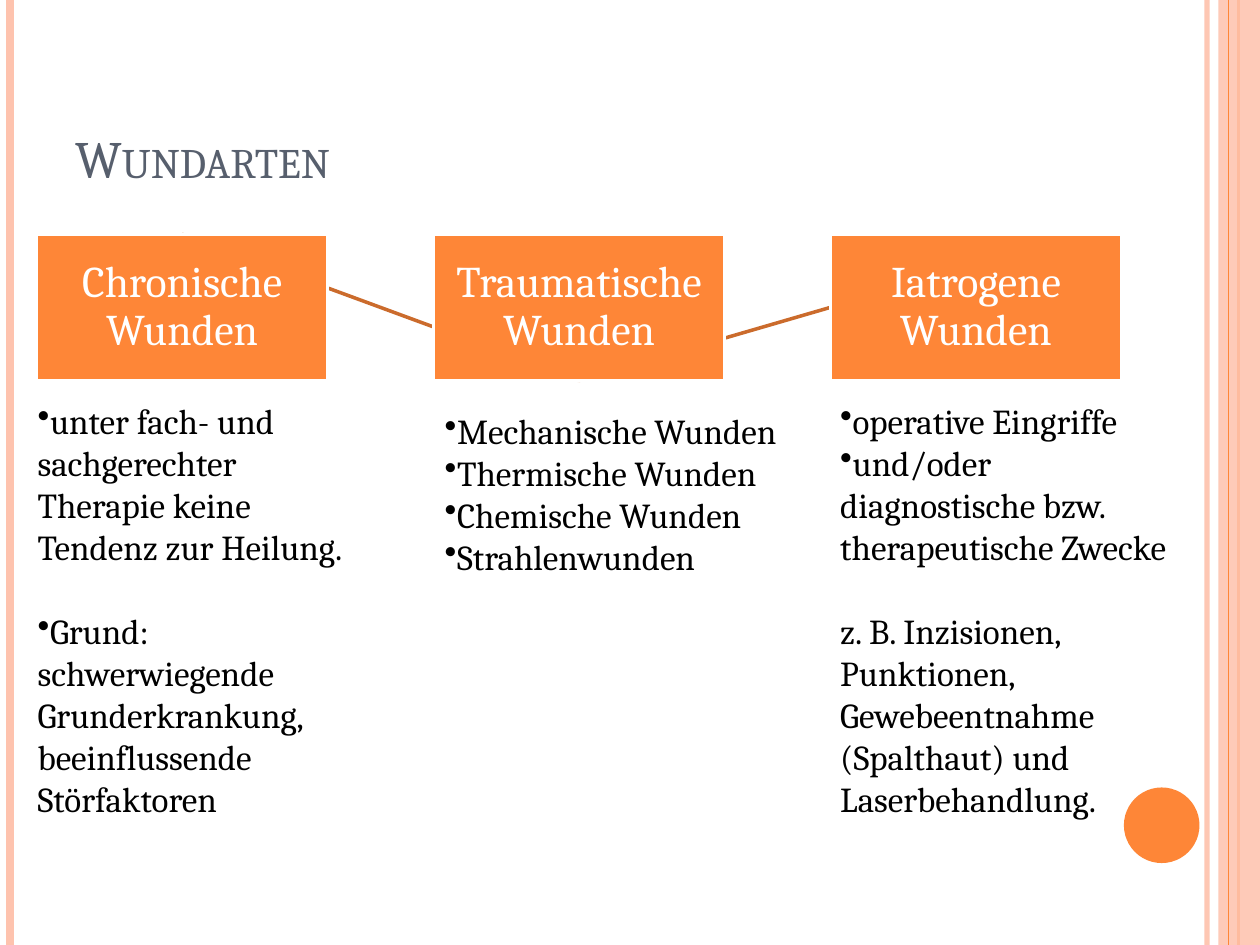
from lxml import etree
from pptx import Presentation
from pptx import util as u
from pptx.dml.color import RGBColor
from pptx.enum import shapes, text
from pptx.oxml.ns import qn

WIDTH, HEIGHT = 10, 7.5
FONT = "Cambria"
COLORS = {
    "orange": "FE8637",
    "peach": "FEC3AE",
    "rust": "CB6B2C",
    "slate": "575F6D",
    "white": "FFFFFF",
    "black": "000000",
}
BOX_LEFT, BOX_TOP, BOX_WIDTH, BOX_HEIGHT, BOX_STEP = 0.29, 1.86, 2.31, 1.16, 3.15
STRIPES = [
    (9.58, "peach", 3, 93),
    (0.08, "peach", 4.5, 100),
    (9.83, "orange", 1.5, 100),
    (9.75, "orange", 0.75, 100),
]
HEADINGS = ["Chronische Wunden", "Traumatische Wunden", "Iatrogene Wunden"]
LISTS = [
    ((0.2, 3.12, 2.76, 3.47), [
        ("•", "unter fach- und sachgerechter Therapie keine Tendenz zur Heilung.", 0),
        ("•", "Grund: schwerwiegende Grunderkrankung, beeinflussende Störfaktoren", 24),
    ]),
    ((3.43, 3.2, 2.91, 1.45), [
        ("•", "Mechanische Wunden", 0),
        ("•", "Thermische Wunden", 0),
        ("•", "Chemische Wunden", 0),
        ("•", "Strahlenwunden", 0),
    ]),
    ((6.57, 3.12, 2.99, 3.8), [
        ("•", "operative Eingriffe", 0),
        ("•", "und/oder diagnostische bzw.", 0),
        ("", "therapeutische Zwecke", 0),
        ("", "z. B. Inzisionen, Punktionen, Gewebeentnahme (Spalthaut) "
             "und Laserbehandlung.", 24),
    ]),
]


def inches(*lengths):
    return [u.Inches(length) for length in lengths]


def color(name):
    return RGBColor.from_string(COLORS[name])


def set_opacity(element, percent):
    fill = element.find(".//" + qn("a:srgbClr"))
    etree.SubElement(fill, qn("a:alpha"), val=str(percent * 1000))


def style_font(para, size, name):
    para.font.name = FONT
    para.font.size = u.Pt(size)
    para.font.color.rgb = color(name)


def add_line(page, ends, name, width, opacity=100):
    line = page.shapes.add_connector(shapes.MSO_CONNECTOR.STRAIGHT, *inches(*ends))
    line.line.color.rgb = color(name)
    line.line.width = u.Pt(width)
    etree.SubElement(line._element.spPr, qn("a:effectLst"))
    if opacity < 100:
        set_opacity(line._element.spPr, opacity)
    return line


def add_plain_shape(page, kind, place, name):
    shape = page.shapes.add_shape(kind, *inches(*place))
    shape.shadow.inherit = False
    shape.fill.solid()
    shape.fill.fore_color.rgb = color(name)
    shape.line.fill.background()
    return shape


def add_frame(page):
    rectangle, oval = shapes.MSO_SHAPE.RECTANGLE, shapes.MSO_SHAPE.OVAL
    for x, name, width, opacity in STRIPES[:3]:
        add_line(page, (x, 0, x, HEIGHT), name, width, opacity)
    band = add_plain_shape(page, rectangle, (9.67, 0, 0.33, HEIGHT), "peach")
    set_opacity(band._element.spPr, 87)
    x, name, width, opacity = STRIPES[3]
    add_line(page, (x, 0, x, HEIGHT), name, width, opacity)
    add_plain_shape(page, oval, (8.92, 6.25, 0.6, 0.6), "orange")


def add_title(page, words):
    box = page.shapes.add_textbox(*inches(0.5, 0.3, 8.17, 1.25))
    frame = box.text_frame
    frame.word_wrap = True
    frame.vertical_anchor = text.MSO_ANCHOR.BOTTOM
    para = frame.paragraphs[0]
    span = para.add_run()
    span.text = words
    style_font(para, 30, "slate")
    span.font._element.set("cap", "small")


def add_heading(page, column, words):
    place = (BOX_LEFT + column * BOX_STEP, BOX_TOP, BOX_WIDTH, BOX_HEIGHT)
    box = add_plain_shape(page, shapes.MSO_SHAPE.RECTANGLE, place, "orange")
    box.line.color.rgb = color("white")
    box.line.width = u.Pt(2)
    frame = box.text_frame
    frame.word_wrap = True
    frame.margin_left = frame.margin_right = u.Inches(0.02)
    frame.margin_top = frame.margin_bottom = u.Inches(0.02)
    frame.vertical_anchor = text.MSO_ANCHOR.MIDDLE
    para = frame.paragraphs[0]
    para.text = words
    para.alignment = text.PP_ALIGN.CENTER
    para.line_spacing = 0.9
    style_font(para, 25, "white")
    return box


def add_headings(page):
    links = [add_line(page, (0, 0, 1, 1), "rust", 2) for _ in range(2)]
    chronic, traumatic, iatrogenic = [
        add_heading(page, column, words) for column, words in enumerate(HEADINGS)
    ]
    for link, target, side in zip(links, (iatrogenic, chronic), (1, 0)):
        link.begin_connect(traumatic, 2)
        link.end_connect(target, side)


def add_list(page, place, items):
    frame = page.shapes.add_textbox(*inches(*place)).text_frame
    frame.word_wrap = True
    frame.auto_size = text.MSO_AUTO_SIZE.SHAPE_TO_FIT_TEXT
    for index, (bullet, words, gap) in enumerate(items):
        para = frame.add_paragraph() if index else frame.paragraphs[0]
        para.text = words
        if bullet:
            properties = para._p.get_or_add_pPr()
            etree.SubElement(properties, qn("a:buChar"), char=bullet)
        if gap:
            para.space_before = u.Pt(gap)
        style_font(para, 20, "black")


def main():
    deck = Presentation()
    deck.slide_width, deck.slide_height = inches(WIDTH, HEIGHT)
    page = deck.slides.add_slide(deck.slide_layouts[6])
    add_frame(page)
    add_title(page, "Wundarten")
    add_headings(page)
    for place, items in LISTS:
        add_list(page, place, items)
    deck.save("out.pptx")


if __name__ == "__main__":
    main()
